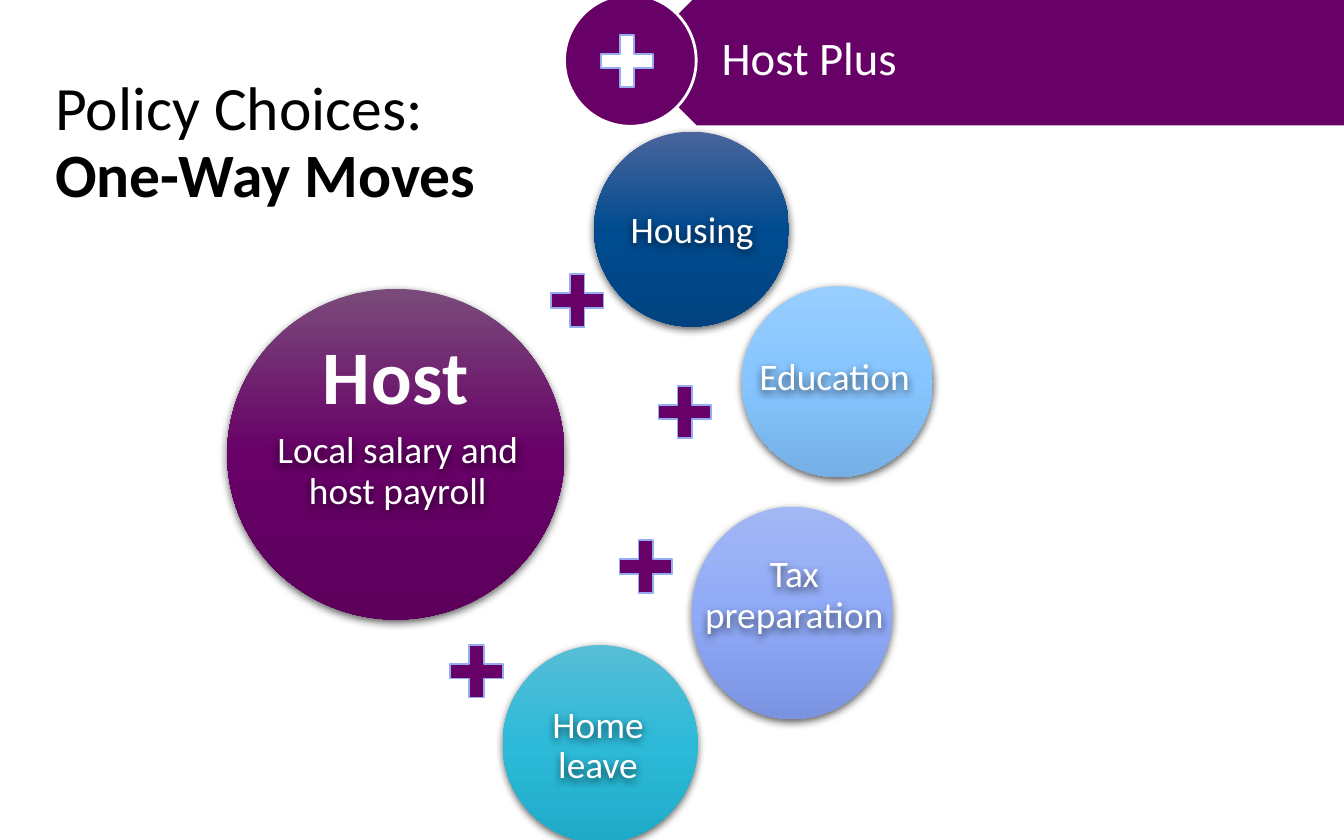
from copy import deepcopy

from pptx import Presentation
from pptx.dml.color import RGBColor
from pptx.enum.shapes import MSO_SHAPE
from pptx.enum.text import MSO_ANCHOR, MSO_AUTO_SIZE, PP_ALIGN
from pptx.oxml import parse_xml
from pptx.oxml.ns import nsdecls, qn
from pptx.util import Inches, Pt

OVAL, PLUS = MSO_SHAPE.OVAL, MSO_SHAPE.CROSS
TOP, MIDDLE, BOTTOM = MSO_ANCHOR.TOP, MSO_ANCHOR.MIDDLE, MSO_ANCHOR.BOTTOM
LEFT, CENTER = PP_ALIGN.LEFT, PP_ALIGN.CENTER
FIT_NONE, FIT_SHAPE = MSO_AUTO_SIZE.NONE, MSO_AUTO_SIZE.SHAPE_TO_FIT_TEXT
TITLE_ONLY = 5
FONT = "Calibri"
PLUS_SIZE = 0.39
TIGHT = (0.02, 0.02, 0.02, 0.02)

COLORS = {
    "black": "000000",
    "white": "FFFFFF",
    "near_white": "FEFEFE",
    "purple": "670067",
    "plus_edge": "95ACF2",
}

# Bubble box, gradient from top to bottom, label, label box, label anchor
BUBBLES = [
    ((5.52, 2.13, 1.42, 1.42), ("98CDFF", "86C5FF", "75AFE5"),
     "Education", (5.52, 2.4, 1.38, 0.83), MIDDLE),
    ((1.69, 2.15, 2.51, 2.46), ("7A4B7A", "670067", "5C005C"),
     "Local salary and host payroll", (1.96, 2.51, 2, 1.32), BOTTOM),
    ((5.15, 3.77, 1.49, 1.58), ("A3B7F5", "90AAF7", "7A94E1"),
     "Tax preparation", (5.17, 3.92, 1.48, 1.03), MIDDLE),
    ((4.42, 0.98, 1.45, 1.45), ("4B659C", "004B90", "004380"),
     "Housing", (4.53, 1.21, 1.24, 1.02), MIDDLE),
    ((3.74, 4.8, 1.45, 1.47), ("58BDD6", "2CBAD8", "1FABC8"),
     "Home leave", (3.83, 5.07, 1.24, 0.97), MIDDLE),
]
PLUS_POSITIONS = [(4.1, 2.04), (4.9, 2.87), (4.61, 4.02), (3.35, 4.8)]


def rgb(name):
    return RGBColor.from_string(COLORS[name])


def inches(values):
    return [Inches(value) for value in values]


def add_soft_shadow(shape):
    """Drop a blurred shadow; on an unfilled box it falls from the text."""
    shape.shadow.inherit = False
    effects = shape._element.spPr.find(qn("a:effectLst"))
    effects.append(parse_xml(
        f'<a:outerShdw {nsdecls("a")} blurRad="{Pt(4.5)}" dist="{Pt(1.5)}" '
        'dir="5400000" rotWithShape="0"><a:srgbClr val="000000">'
        '<a:alpha val="63000"/></a:srgbClr></a:outerShdw>'))


def format_frame(frame, margins, **settings):
    sides = ("margin_left", "margin_top", "margin_right", "margin_bottom")
    for name, value in {**dict(zip(sides, inches(margins))), **settings}.items():
        setattr(frame, name, value)


def write_span(para, text, size, color, bold=False):
    span = para.add_run()
    span.text = text
    for name, value in {"name": FONT, "size": Pt(size), "bold": bold}.items():
        setattr(span.font, name, value)
    span.font.color.rgb = rgb(color)
    return span


def format_para(para, align, spacing=0.9):
    para.alignment = align
    para.line_spacing = spacing
    return para


def add_title(slide):
    title = slide.shapes.title
    title.left, title.top, title.width, title.height = inches((0.31, -0.01, 4.36, 2.16))
    frame = title.text_frame
    format_frame(frame, (0.1, 0.05, 0.1, 0.05), word_wrap=True,
                 auto_size=FIT_NONE, vertical_anchor=MIDDLE)
    para = format_para(frame.paragraphs[0], LEFT)
    write_span(para, "Policy Choices: ", 33, "black")
    para.add_line_break()
    write_span(para, "One-Way Moves", 33, "black", bold=True)


def add_bubble(slide, box, gradient):
    bubble = slide.shapes.add_shape(OVAL, *inches(box))
    bubble.line.fill.background()
    fill = bubble.fill
    fill.gradient()
    fill.gradient_angle = 270
    stops = bubble._element.spPr.find(qn("a:gradFill")).find(qn("a:gsLst"))
    stops.append(deepcopy(stops[-1]))
    for stop, color, position in zip(fill.gradient_stops, gradient, (0, 0.5, 1)):
        stop.color.rgb = RGBColor.from_string(color)
        stop.position = position
    add_soft_shadow(bubble)


def add_label(slide, text, box, anchor):
    label = slide.shapes.add_textbox(*inches(box))
    format_frame(label.text_frame, TIGHT, word_wrap=True, vertical_anchor=anchor)
    para = format_para(label.text_frame.paragraphs[0], CENTER)
    write_span(para, text, 20, "white")
    add_soft_shadow(label)


def add_host_heading(slide):
    heading = slide.shapes.add_textbox(*inches((2.32, 2.41, 1.25, 0.76)))
    format_frame(heading.text_frame, (0.07, 0.04, 0.07, 0.04), word_wrap=False,
                 auto_size=FIT_SHAPE, vertical_anchor=TOP)
    para = format_para(heading.text_frame.paragraphs[0], CENTER, 1.0)
    span = write_span(para, "Host", 40.5, "near_white", bold=True)
    properties = span.font._element
    properties.set("spc", "40")
    properties.insert(0, parse_xml(
        f'<a:ln {nsdecls("a")} w="{Pt(0.75)}"><a:solidFill>'
        f'<a:srgbClr val="{COLORS["purple"]}"/></a:solidFill></a:ln>'))


def paint(shape, fill, line, width):
    shape.shadow.inherit = False
    shape.fill.solid()
    shape.fill.fore_color.rgb = rgb(fill)
    shape.line.color.rgb = rgb(line)
    shape.line.width = Pt(width)


def add_plus(slide, left, top, fill="purple"):
    plus = slide.shapes.add_shape(PLUS, *inches((left, top, PLUS_SIZE, PLUS_SIZE)))
    plus.adjustments[0] = 0.363
    paint(plus, fill, "plus_edge", 1)


def add_banner(slide):
    left, right, top, bottom = 4.69, 10.01, -0.04, 0.94
    shoulder, middle = 5.18, (top + bottom) / 2
    builder = slide.shapes.build_freeform(Inches(right), Inches(bottom))
    outline = [(shoulder, bottom), (left, middle), (shoulder, top), (right, top)]
    builder.add_line_segments([inches(point) for point in outline], close=True)
    banner = builder.convert_to_shape()
    paint(banner, "purple", "white", 1)
    format_frame(banner.text_frame, (0.68, 0.1, 0.19, 0.1), word_wrap=True,
                 vertical_anchor=MIDDLE)
    para = format_para(banner.text_frame.paragraphs[0], LEFT)
    write_span(para, "Host Plus", 25, "white")

    badge = slide.shapes.add_shape(OVAL, *inches((4.2, top, 0.98, 0.98)))
    paint(badge, "purple", "white", 1.5)
    add_plus(slide, 4.47, 0.26, "white")


def main():
    deck = Presentation()
    deck.slide_width, deck.slide_height = Inches(10), Inches(6.25)
    slide = deck.slides.add_slide(deck.slide_layouts[TITLE_ONLY])
    add_title(slide)
    for box, gradient, text, label_box, anchor in BUBBLES:
        add_bubble(slide, box, gradient)
        add_label(slide, text, label_box, anchor)
    add_host_heading(slide)
    add_banner(slide)
    for left, top in PLUS_POSITIONS:
        add_plus(slide, left, top)
    deck.save("out.pptx")


if __name__ == "__main__":
    main()
